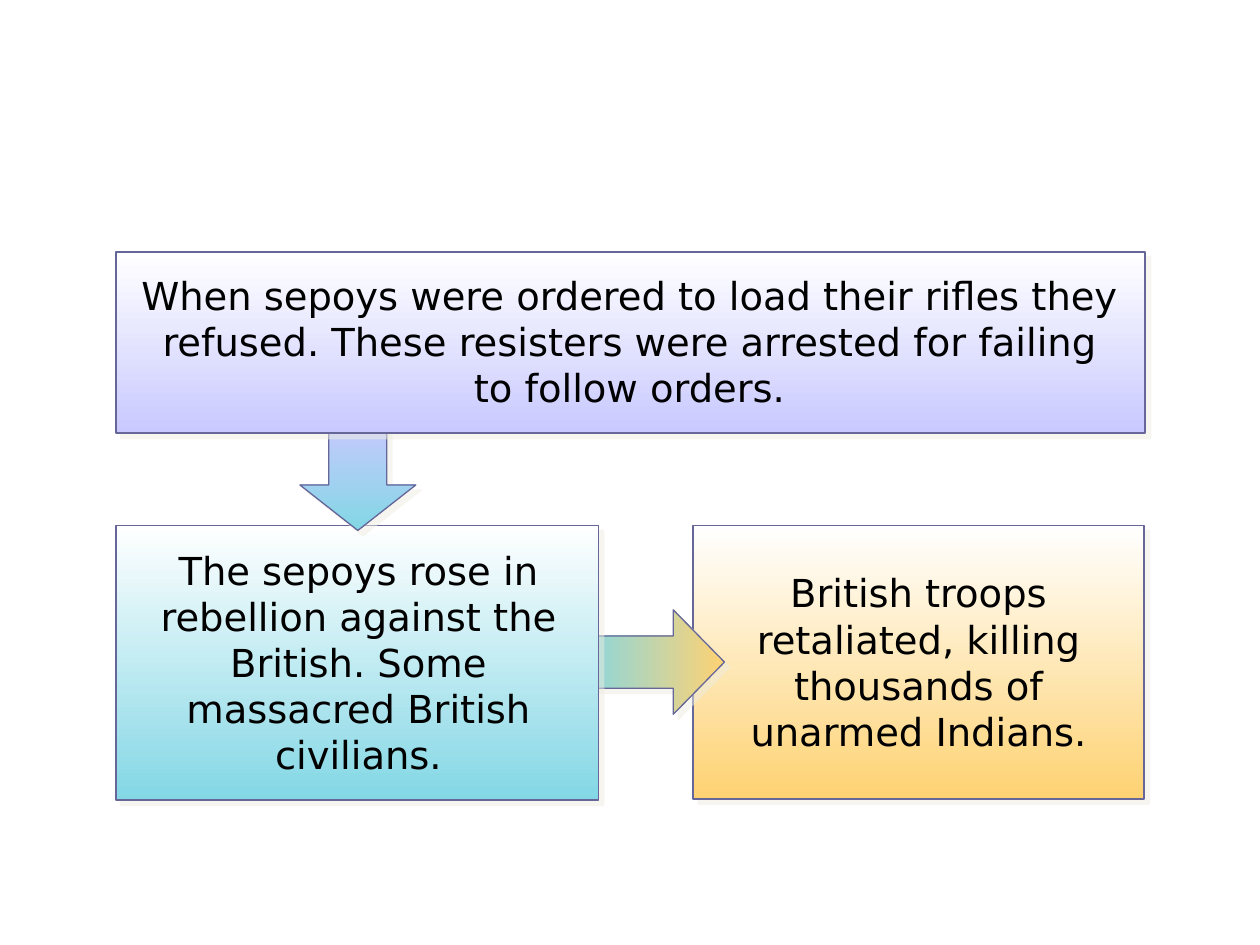
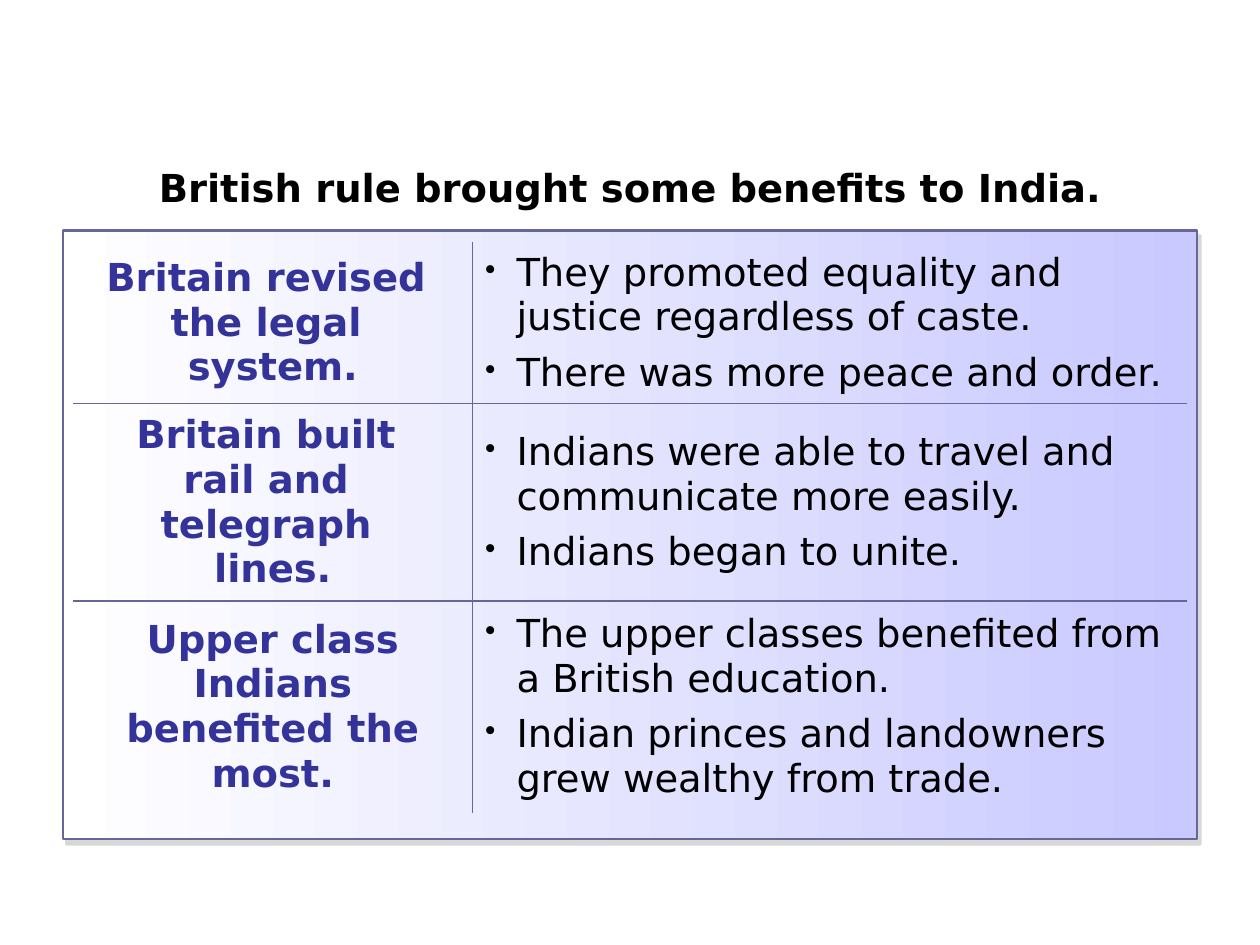
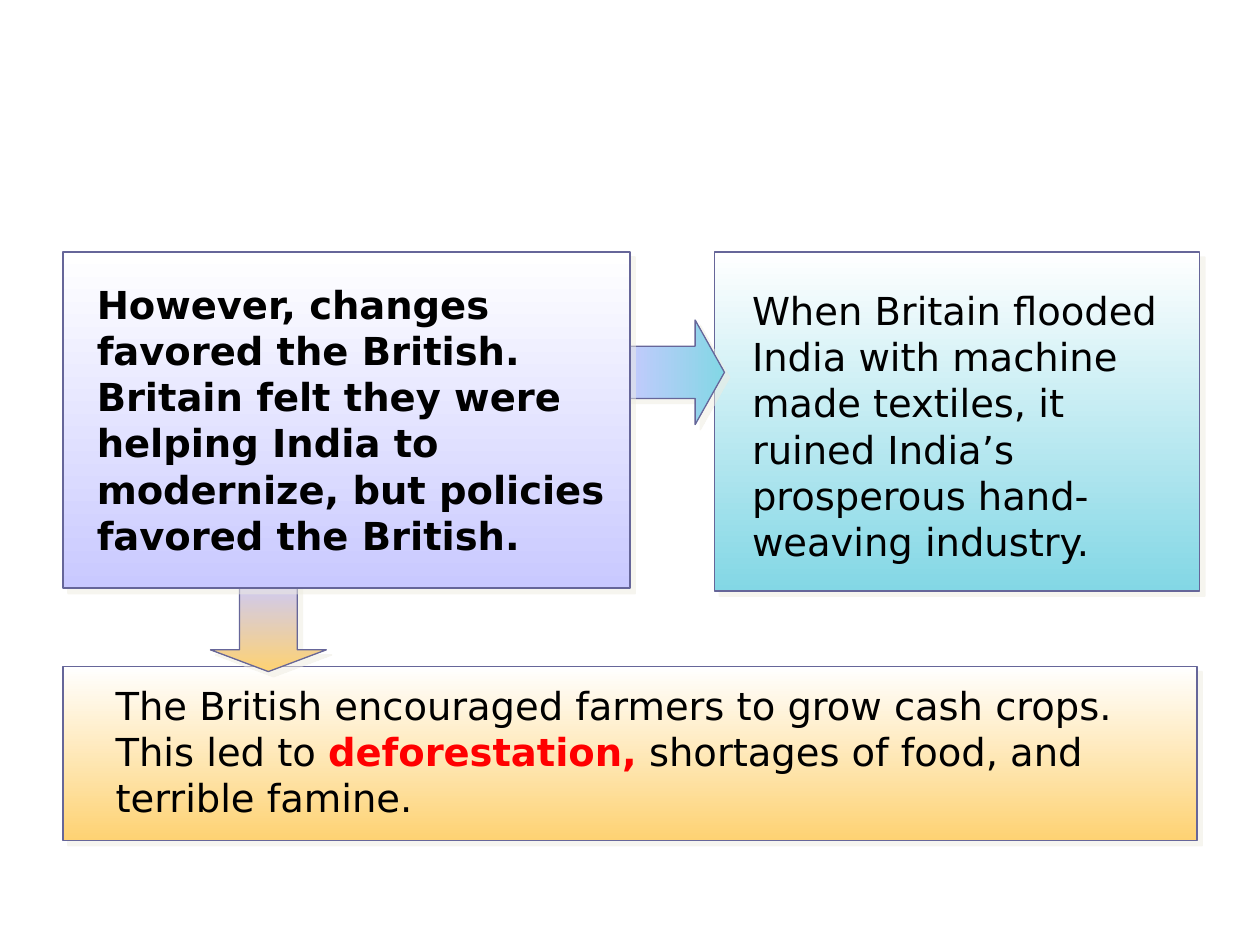
from lxml.etree import SubElement
from pptx import Presentation
from pptx.dml.color import RGBColor
from pptx.enum.shapes import MSO_SHAPE
from pptx.enum.text import MSO_ANCHOR, MSO_AUTO_SIZE, PP_ALIGN
from pptx.oxml.ns import qn
from pptx.util import Pt

# Shared style: 100 px to the inch
PX = 9144
FONT, SIZE = "DejaVu Sans", 22
BLACK, WHITE, RED, NAVY = "000000", "FFFFFF", "FF0000", "333399"
EDGE, LILAC, AQUA, GOLD = "666699", "C9C9FF", "83D7E5", "FED273"
SOFT = ("EEECE1", 4.2, 45)
GREY = ("B2B2B2", 3.6, 56)
PLAIN = "{2D5ABB26-0587-4C30-8999-92F81FD0307C}"


def color(code):
    return RGBColor.from_string(code)


def add(node, tag, **attrs):
    return SubElement(node, qn(tag), {k: str(v) for k, v in attrs.items()})


class Deck:
    def __init__(self, width, height):
        self.file = Presentation()
        self.file.slide_width, self.file.slide_height = width * PX, height * PX

    def page(self):
        self.slide = self.file.slides.add_slide(self.file.slide_layouts[6])

    def style(self, par, align=PP_ALIGN.LEFT, bold=False, ink=BLACK):
        par.alignment = align
        font = par.font
        font.name, font.size, font.bold = FONT, Pt(SIZE), bold
        font.color.rgb = color(ink)

    def shape(self, kind, place, fade, down=True, line=1, shade=SOFT):
        """Shape with a two-colour gradient and a hard shadow."""
        item = self.slide.shapes.add_shape(kind, *(n * PX for n in place))
        item.fill.gradient()
        item.fill.gradient_angle = 270 if down else 0
        for stop, code in zip(item.fill.gradient_stops, fade):
            stop.color.rgb = color(code)
        item.line.color.rgb = color(EDGE)
        item.line.width = Pt(line)
        item.shadow.inherit = False
        tint, dist, angle = shade
        effect = item._element.spPr.find(qn("a:effectLst"))
        drop = add(effect, "a:outerShdw", blurRad=0, dist=Pt(dist),
                   dir=angle * 60000, algn="ctr", rotWithShape=0)
        add(add(drop, "a:srgbClr", val=tint), "a:alpha", val=50000)
        return item

    def panel(self, place, tone, **style):
        self.shape(MSO_SHAPE.RECTANGLE, place, (WHITE, tone), **style)

    def arrow(self, place, fade, head, down):
        kind = MSO_SHAPE.DOWN_ARROW if down else MSO_SHAPE.RIGHT_ARROW
        item = self.shape(kind, place, fade, down, line=0.75)
        item.adjustments[0], item.adjustments[1] = 0.5, head

    def text(self, place, *parts, **style):
        """Text box; every second part is stressed in bold red."""
        frame = self.slide.shapes.add_textbox(*(n * PX for n in place)).text_frame
        frame.word_wrap = True
        frame.auto_size = MSO_AUTO_SIZE.SHAPE_TO_FIT_TEXT
        par = frame.paragraphs[0]
        self.style(par, **style)
        for i, part in enumerate(parts):
            run = par.add_run()
            run.text = part
            if i % 2:
                run.font.bold = True
                run.font.color.rgb = color(RED)

    def bullet(self, par, words):
        par.text = words
        props = par._p.get_or_add_pPr()
        props.set("marL", str(25 * PX))
        props.set("indent", str(-25 * PX))
        add(add(props, "a:buClr"), "a:srgbClr", val=BLACK)
        add(props, "a:buSzPct", val=80000)
        add(props, "a:buChar", char="•")
        par.space_after = Pt(6)
        self.style(par)

    def rule(self, cell, sides):
        """Lines on the given cell sides, no fill."""
        props = cell._tc.get_or_add_tcPr()
        for side in sides:
            line = add(props, "a:ln" + side, w=Pt(1))
            add(add(line, "a:solidFill"), "a:srgbClr", val=EDGE)
        cell.fill.background()
        cell.vertical_anchor = MSO_ANCHOR.MIDDLE

    def table(self, place, cols, rows, data):
        grid = self.slide.shapes.add_table(
            len(rows), len(cols), *(n * PX for n in place)).table
        grid.first_row = grid.horz_banding = False
        grid._tbl.tblPr.find(qn("a:tableStyleId")).text = PLAIN
        for col, width in zip(grid.columns, cols):
            col.width = width * PX
        for i, (height, (head, points)) in enumerate(zip(rows, data)):
            grid.rows[i].height = height * PX
            left, right = grid.cell(i, 0), grid.cell(i, 1)
            inner = ("T" if i else "") + ("B" if i < len(rows) - 1 else "")
            self.rule(left, "R" + inner)
            self.rule(right, "L" + inner)
            par = left.text_frame.paragraphs[0]
            par.text = head
            self.style(par, PP_ALIGN.CENTER, True, NAVY)
            frame = right.text_frame
            for j, point in enumerate(points):
                self.bullet(frame.add_paragraph() if j else frame.paragraphs[0], point)


def main():
    deck = Deck(1000, 750)
    mid = PP_ALIGN.CENTER

    # Slide 1: the rebellion
    deck.page()
    deck.panel((550, 417, 358, 217), GOLD)
    deck.text((579, 447, 300, 157),
              "British troops retaliated, killing thousands of unarmed Indians.", align=mid)
    deck.arrow((458, 484, 117, 83), (AQUA, GOLD), 0.49, down=False)
    deck.panel((92, 417, 383, 218), AQUA)
    deck.text((103, 429, 363, 193),
              "The sepoys rose in rebellion against the British. "
              "Some massacred British civilians.", align=mid)
    deck.arrow((238, 333, 92, 88), (LILAC, AQUA), 0.41, down=True)
    deck.panel((92, 200, 817, 144), LILAC)
    deck.text((102, 211, 795, 120),
              "When sepoys were ordered to load their rifles they refused. "
              "These resisters were arrested for failing to follow orders.", align=mid)

    # Slide 2: benefits of British rule
    deck.page()
    deck.text((50, 125, 900, 47), "British rule brought some benefits to India.",
              align=mid, bold=True)
    deck.panel((50, 183, 900, 483), LILAC, down=False, line=1.5, shade=GREY)
    deck.table((58, 192, 883, 453), (317, 567), (125, 117, 168), [
        ("Britain revised \nthe legal \nsystem.",
         ["They promoted equality and justice regardless of caste.",
          "There was more peace and order."]),
        ("Britain built \nrail and \ntelegraph \nlines.",
         ["Indians were able to travel and communicate more easily.",
          "Indians began to unite."]),
        ("Upper class Indians benefited the most.",
         ["The upper classes benefited from a British education.",
          "Indian princes and landowners grew wealthy from trade."]),
    ])

    # Slide 3: costs of British rule
    deck.page()
    deck.panel((567, 200, 385, 269), AQUA)
    deck.text((587, 223, 371, 233),
              "When Britain flooded India with machine made textiles, "
              "it ruined India’s prosperous hand-weaving industry.")
    deck.panel((50, 529, 900, 138), GOLD)
    deck.text((82, 536, 867, 121),
              "The British encouraged farmers to grow cash crops. This led to ",
              "deforestation,", " shortages of food, and terrible famine.")
    deck.arrow((492, 254, 83, 83), (LILAC, AQUA), 0.28, down=False)
    deck.arrow((167, 458, 92, 75), (LILAC, GOLD), 0.23, down=True)
    deck.panel((50, 200, 450, 267), LILAC)
    deck.text((67, 218, 433, 233),
              "However, changes favored the British. Britain felt they were helping "
              "India to modernize, but policies favored the British.", bold=True)

    deck.file.save("out.pptx")


if __name__ == "__main__":
    main()
